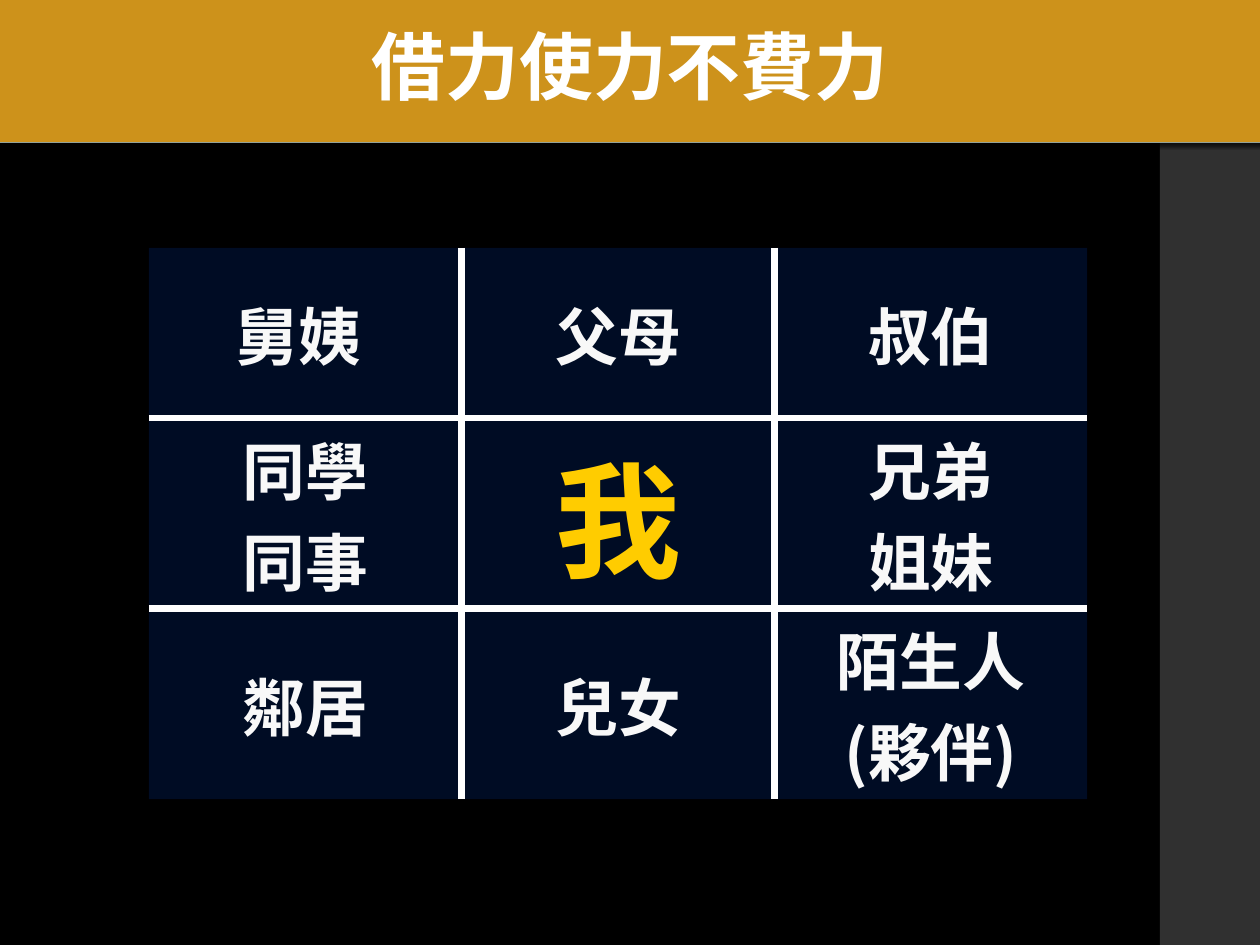
import pptx
import pptx.dml.color
import pptx.enum.shapes
import pptx.enum.text
import pptx.oxml
import pptx.oxml.ns
import pptx.util
from lxml import etree

Inches = pptx.util.Inches
Pt = pptx.util.Pt

TITLE = "借力使力不費力"
CENTRE_WORD = "我"
RELATIONS = [
    [["舅姨 "], ["父母"], ["叔伯"]],
    [["同學", "同事"], [CENTRE_WORD], ["兄弟", "姐妹"]],
    [["鄰居"], ["兒女"], ["陌生人", "(夥伴)"]],
]
COLORS = {
    "background": "000000",
    "sidebar": "303030",
    "banner": "CD921B",
    "banner_line": "93A299",
    "title": "FFFFFF",
    "cell": "000F2B",
    "grid": "FFFFFF",
    "text": "F8F8F8",
    "highlight": "FFCC00",
}
TITLE_FONT = "Noto Sans CJK TC"
TABLE_FONT = "Noto Sans CJK SC"
SLIDE_WIDTH, SLIDE_HEIGHT = 14.22, 10.67
TABLE_LEFT, TABLE_TOP = 1.68, 2.8
COLUMN_WIDTH = 3.53
ROW_HEIGHTS = [1.92, 2.13, 2.13]
CELL_OPACITY = 85
GRID_WIDTH = 6


def rgb(name):
    return pptx.dml.color.RGBColor.from_string(COLORS[name])


def add_run(paragraph, text, size, font_name, color):
    """Add a bold run whose font covers both Latin and East Asian text."""
    run = paragraph.add_run()
    run.text = text
    run.font.size = Pt(size)
    run.font.bold = True
    run.font.name = font_name
    run.font.color.rgb = rgb(color)
    east_asian = etree.SubElement(run.font._element, pptx.oxml.ns.qn("a:ea"))
    east_asian.set("typeface", font_name)


def add_rectangle(slide, left, top, width, height, color):
    shape = slide.shapes.add_shape(
        pptx.enum.shapes.MSO_SHAPE.RECTANGLE,
        Inches(left), Inches(top), Inches(width), Inches(height))
    shape.shadow.inherit = False
    shape.fill.solid()
    shape.fill.fore_color.rgb = rgb(color)
    shape.line.fill.background()
    return shape


def add_banner(slide):
    banner = add_rectangle(slide, -0.13, -0.02, 14.48, 1.63, "banner")
    banner.line.color.rgb = rgb("banner_line")
    banner.line.width = Pt(0.75)
    effects = banner._element.spPr.find(pptx.oxml.ns.qn("a:effectLst"))
    effects.append(pptx.oxml.parse_xml(
        f'<a:outerShdw {pptx.oxml.ns.nsdecls("a")} blurRad="{Pt(4)}" '
        f'dist="{Pt(1.2)}" dir="5400000" rotWithShape="0">'
        '<a:srgbClr val="000000"><a:alpha val="75000"/></a:srgbClr>'
        '</a:outerShdw>'))
    frame = banner.text_frame
    frame.word_wrap = True
    frame.vertical_anchor = pptx.enum.text.MSO_ANCHOR.MIDDLE
    frame.margin_left = frame.margin_right = Inches(0.25)
    frame.margin_top = frame.margin_bottom = Inches(0.25)
    paragraph = frame.paragraphs[0]
    paragraph.alignment = pptx.enum.text.PP_ALIGN.CENTER
    paragraph.line_spacing = 0.9
    paragraph.space_after = Pt(21)
    add_run(paragraph, TITLE, 60, TITLE_FONT, "title")


def style_cell(cell, inner_sides):
    """Fill the cell and draw grid lines only on the sides that meet a neighbour."""
    cell.fill.solid()
    cell.fill.fore_color.rgb = rgb("cell")
    properties = cell._tc.get_or_add_tcPr()
    fill_color = next(properties.iter(pptx.oxml.ns.qn("a:srgbClr")))
    alpha = etree.SubElement(fill_color, pptx.oxml.ns.qn("a:alpha"))
    alpha.set("val", str(CELL_OPACITY * 1000))
    for position, (side, is_inner) in enumerate(inner_sides.items()):
        paint = (f'<a:solidFill><a:srgbClr val="{COLORS["grid"]}"/></a:solidFill>'
                 if is_inner else "<a:noFill/>")
        properties.insert(position, pptx.oxml.parse_xml(
            f'<a:ln{side} {pptx.oxml.ns.nsdecls("a")} w="{Pt(GRID_WIDTH)}">'
            f'{paint}</a:ln{side}>'))


def write_cell(cell, lines):
    cell.vertical_anchor = pptx.enum.text.MSO_ANCHOR.MIDDLE
    cell.margin_left = cell.margin_right = Inches(0.11)
    cell.margin_top = cell.margin_bottom = Inches(0.05)
    frame = cell.text_frame
    for index, line in enumerate(lines):
        paragraph = frame.add_paragraph() if index else frame.paragraphs[0]
        paragraph.alignment = pptx.enum.text.PP_ALIGN.CENTER
        is_centre = line == CENTRE_WORD
        add_run(paragraph, line, 102 if is_centre else 51, TABLE_FONT,
                "highlight" if is_centre else "text")


def add_relations_table(slide):
    row_count, column_count = len(RELATIONS), len(RELATIONS[0])
    table = slide.shapes.add_table(
        row_count, column_count, Inches(TABLE_LEFT), Inches(TABLE_TOP),
        Inches(COLUMN_WIDTH * column_count), Inches(sum(ROW_HEIGHTS))).table
    table.first_row = False
    table.horz_banding = False
    for column in table.columns:
        column.width = Inches(COLUMN_WIDTH)
    for row_index, row in enumerate(RELATIONS):
        table.rows[row_index].height = Inches(ROW_HEIGHTS[row_index])
        for column_index, lines in enumerate(row):
            cell = table.cell(row_index, column_index)
            write_cell(cell, lines)
            style_cell(cell, {
                "L": column_index > 0,
                "R": column_index < column_count - 1,
                "T": row_index > 0,
                "B": row_index < row_count - 1,
            })


def main():
    presentation = pptx.Presentation()
    presentation.slide_width = Inches(SLIDE_WIDTH)
    presentation.slide_height = Inches(SLIDE_HEIGHT)
    slide = presentation.slides.add_slide(presentation.slide_layouts[6])
    slide.background.fill.solid()
    slide.background.fill.fore_color.rgb = rgb("background")
    add_rectangle(slide, 13.09, 0, 1.14, SLIDE_HEIGHT, "sidebar")
    add_banner(slide)
    add_relations_table(slide)
    presentation.save("out.pptx")


if __name__ == "__main__":
    main()
